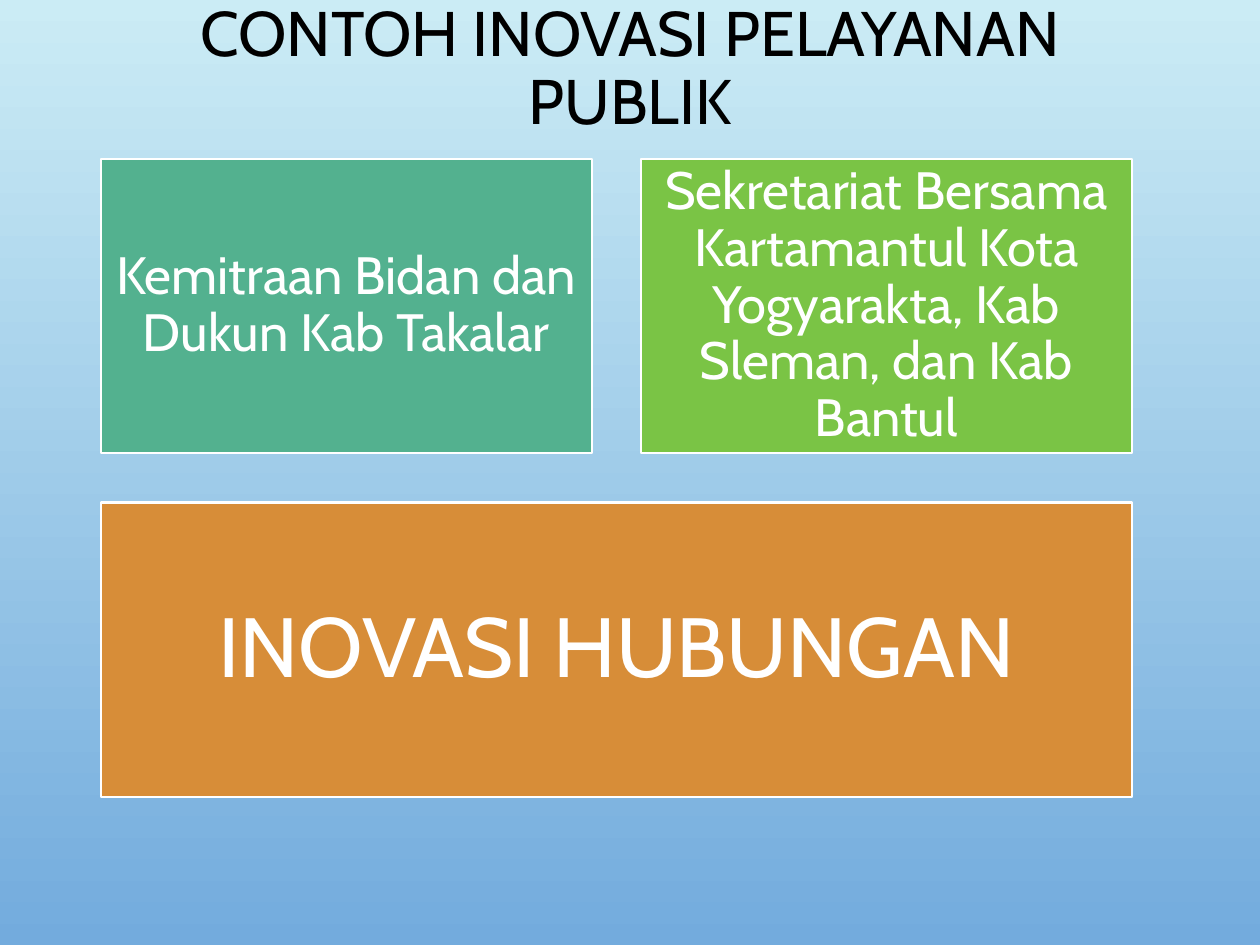
import pptx
import pptx.dml.color
import pptx.enum.shapes
import pptx.enum.text
import pptx.util
from pptx.util import Cm

RGBColor = pptx.dml.color.RGBColor
SKY = RGBColor(0xCB, 0xEC, 0xF5)
BLUE = RGBColor(0x73, 0xAB, 0xDD)
TEAL = RGBColor(0x53, 0xB1, 0x8F)
GREEN = RGBColor(0x7A, 0xC4, 0x45)
ORANGE = RGBColor(0xD7, 0x8D, 0x38)
WHITE = RGBColor(0xFF, 0xFF, 0xFF)
BLACK = RGBColor(0x00, 0x00, 0x00)

LEFT, TOP = 2.03, 3.2
BOX_W, BOX_H, GAP = 9.9, 5.94, 0.99


class SlideBuilder:
    """Holds the style and the current slide, and adds its elements."""

    font = "Cabin"
    line_spacing = 0.9

    def __init__(self, s):
        self.s = s

    def background(self, top, bottom):
        fill = self.s.background.fill
        fill.gradient()
        fill.gradient_angle = 270
        for stop, color in zip(fill.gradient_stops, (top, bottom)):
            stop.color.rgb = color

    def set_text(self, tf, text, size, color):
        tf.text = text
        tf.word_wrap = True
        tf.auto_size = pptx.enum.text.MSO_AUTO_SIZE.NONE
        tf.vertical_anchor = pptx.enum.text.MSO_ANCHOR.MIDDLE
        p = tf.paragraphs[0]
        p.alignment = pptx.enum.text.PP_ALIGN.CENTER
        p.line_spacing = self.line_spacing
        r = p.runs[0]
        r.font.name = self.font
        r.font.size = pptx.util.Pt(size)
        r.font.color.rgb = color

    def title(self, text, x, y, w, h):
        sp = self.s.shapes.title
        sp.left, sp.top, sp.width, sp.height = Cm(x), Cm(y), Cm(w), Cm(h)
        self.set_text(sp.text_frame, text, 36, BLACK)

    def box(self, text, x, y, w, color, size=30, inset=0.3):
        sp = self.s.shapes.add_shape(
            pptx.enum.shapes.MSO_SHAPE.RECTANGLE, Cm(x), Cm(y), Cm(w), Cm(BOX_H))
        sp.shadow.inherit = False
        sp.fill.solid()
        sp.fill.fore_color.rgb = color
        sp.line.color.rgb = WHITE
        sp.line.width = pptx.util.Pt(1.25)
        tf = sp.text_frame
        tf.margin_left = tf.margin_right = Cm(inset)
        tf.margin_top = tf.margin_bottom = Cm(inset)
        self.set_text(tf, text, size, WHITE)


def main():
    prs = pptx.Presentation()
    prs.slide_width, prs.slide_height = Cm(25.4), Cm(19.05)
    b = SlideBuilder(prs.slides.add_slide(prs.slide_layouts[5]))
    b.background(SKY, BLUE)
    b.title("CONTOH INOVASI PELAYANAN PUBLIK", 1.9, 0.48, 21.6, 1.88)
    examples = [
        ("Kemitraan Bidan dan Dukun Kab Takalar", TEAL),
        ("Sekretariat Bersama Kartamantul Kota Yogyarakta, "
         "Kab Sleman, dan Kab Bantul", GREEN),
    ]
    for i, (text, color) in enumerate(examples):
        b.box(text, LEFT + i * (BOX_W + GAP), TOP, BOX_W, color)
    b.box("INOVASI HUBUNGAN", LEFT, TOP + BOX_H + GAP, 2 * BOX_W + GAP,
          ORANGE, size=48, inset=0.5)
    prs.save("out.pptx")


if __name__ == "__main__":
    main()
